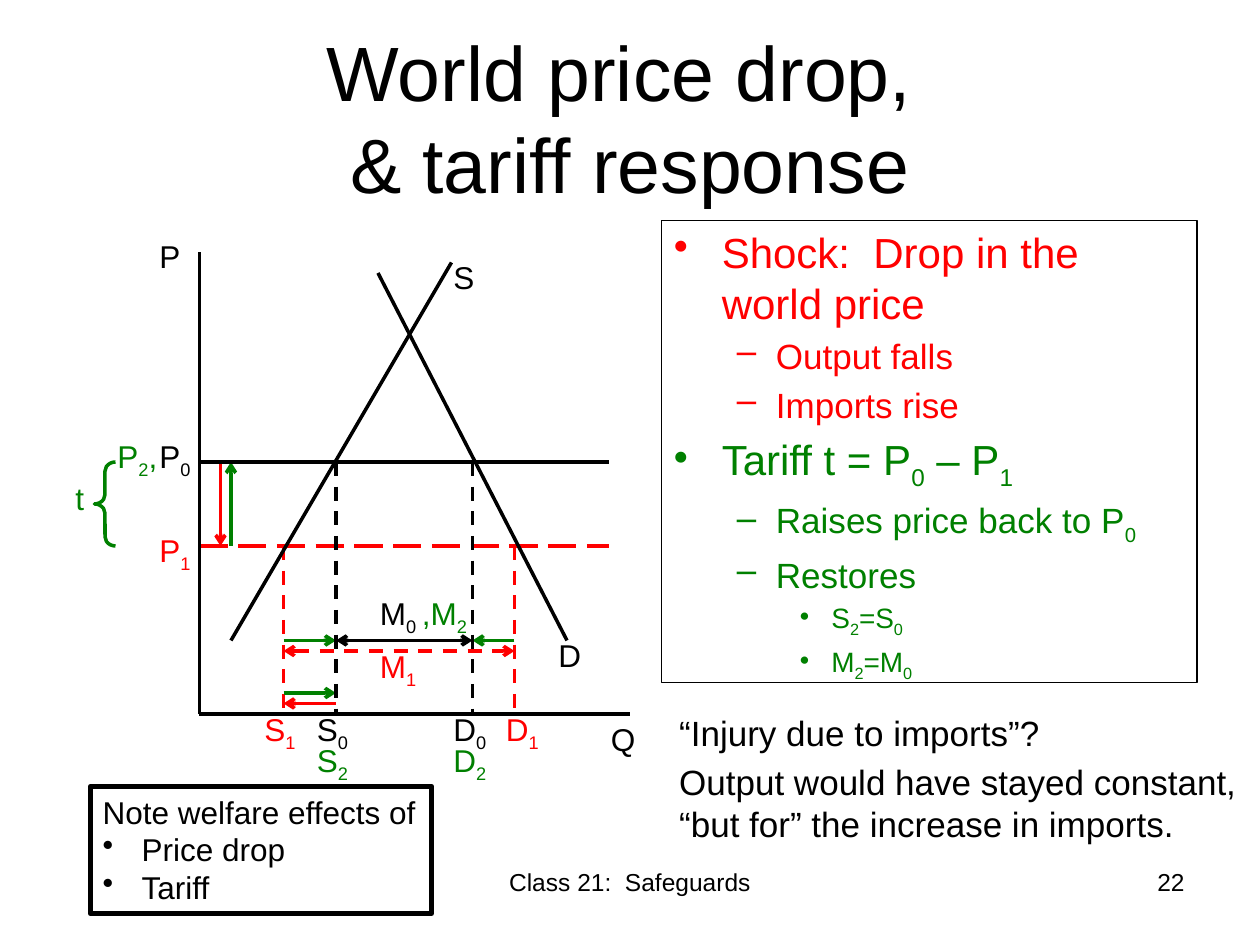
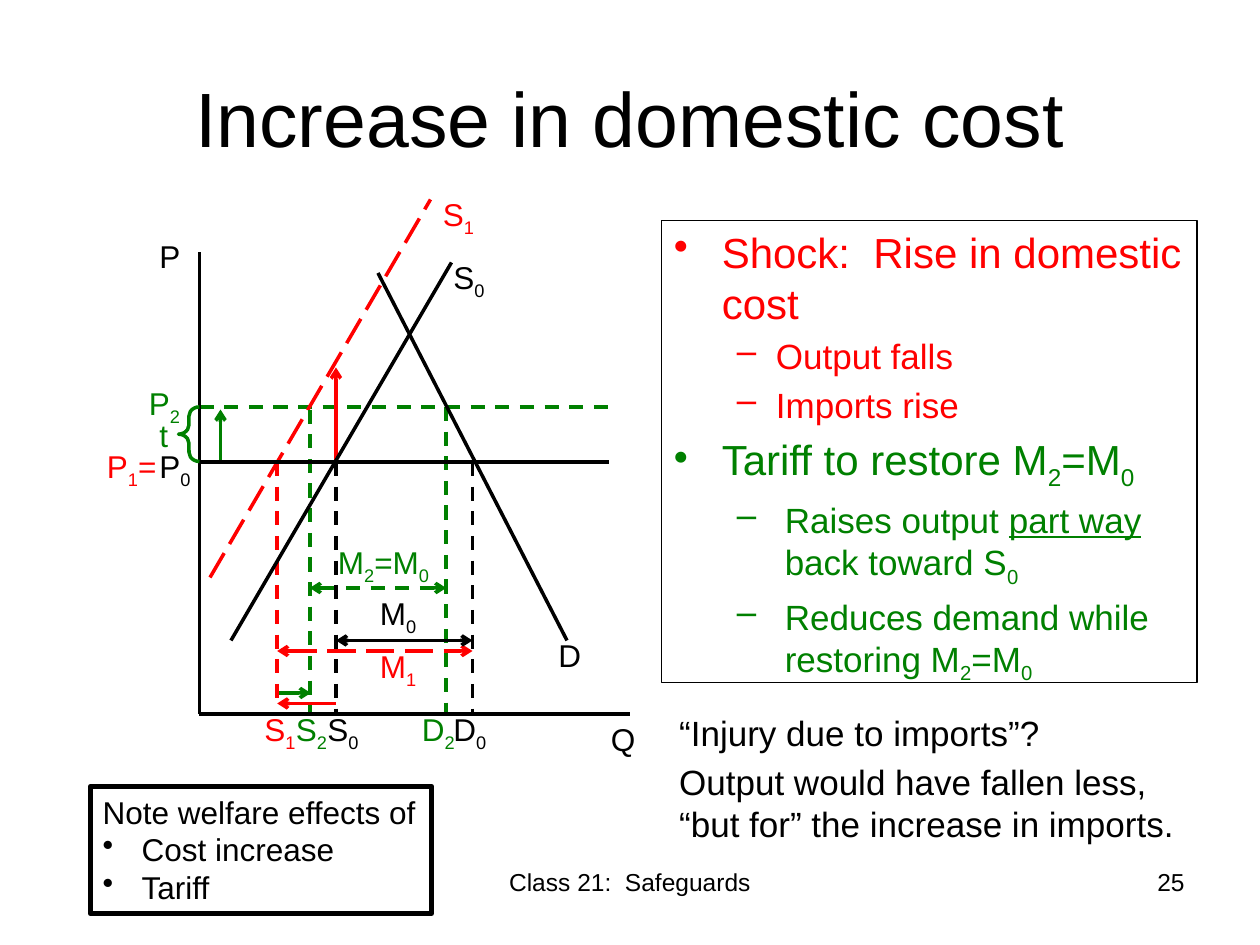
import pptx
import pptx.util
import pptx.dml.color
import pptx.enum.dml
import pptx.enum.shapes
import pptx.enum.text
import pptx.oxml.ns
from lxml import etree

SHAPE = pptx.enum.shapes.MSO_SHAPE
ALIGN = pptx.enum.text.PP_ALIGN
ANCHOR = pptx.enum.text.MSO_ANCHOR
DASHES = pptx.enum.dml.MSO_LINE
rgb = pptx.dml.color.RGBColor.from_string
qn = pptx.oxml.ns.qn

FONT = "Arial"
BLACK, RED, GREEN = "000000", "FF0000", "008000"
SOLID, DASH, LONG = None, DASHES.DASH, DASHES.LONG_DASH
U = pptx.util.Inches(1) // 12  # grid of 120 columns by 90 rows

# style: size, left indent, hanging indent, bullet, space before as share of size
STYLES = {
    "title": (44, 0, 0, "", 0),
    "footer": (14, 0, 0, "", 0),
    "label": (18, 0, 0, "", 0),
    "note item": (18, 0.31, 0.31, "•", 0),
    "remark": (20, 0, 0, "", 0.2),
    "point": (24, 0.38, 0.38, "•", 0.2),
    "dash": (20, 0.81, 0.31, "–", 0.2),
    "wide dash": (20, 0.88, 0.38, "–", 0.2),
    "detail": (16, 1.25, 0.25, "•", 0.2),
}


def write(tf, rows, align=ALIGN.LEFT):
    """Fill tf with (text, style, colour) rows; "|" parts runs, "_" lowers one, "~" underlines one."""
    tf.word_wrap = True
    for i, (text, style, colour) in enumerate(rows):
        size, left, hang, bullet, before = STYLES[style]
        p = tf.add_paragraph() if i else tf.paragraphs[0]
        p.alignment = align
        p.space_before = pptx.util.Pt(before * size)
        if bullet:
            pPr = p._p.get_or_add_pPr()
            pPr.set("marL", str(pptx.util.Inches(left)))
            pPr.set("indent", str(-pptx.util.Inches(hang)))
            etree.SubElement(pPr, qn("a:buChar")).set("char", bullet)
        for part in text.split("|"):
            if part == "\n":
                p.add_line_break()
                continue
            r = p.add_run()
            r.text = part.lstrip("_~")
            r.font.name, r.font.size = FONT, pptx.util.Pt(size)
            r.font.color.rgb = rgb(colour)
            if part[0] == "_":
                r._r.get_or_add_rPr().set("baseline", "-25000")
            if part[0] == "~":
                r.font.underline = True


def outline(s, colour, width=2, dash=SOLID, arrows=""):
    """Draw the line of s; arrows names its ends: "head", "tail" or both."""
    s.line.color.rgb = rgb(colour)
    s.line.width = pptx.util.Pt(width)
    if dash:
        s.line.dash_style = dash
    for end in arrows.split():
        etree.SubElement(s.line._get_or_add_ln(), qn(f"a:{end}End")).set("type", "arrow")


BOTH = "head tail"

# lines: x1, y1, x2, y2, colour, dash, arrows
SHARED_LINES = [
    (19, 68, 60, 68, BLACK, SOLID, ""),
    (19, 68, 19, 24, BLACK, SOLID, ""),
    (54, 61, 36, 26, BLACK, SOLID, ""),
    (22, 61, 43, 25, BLACK, SOLID, ""),
    (19, 44, 58, 44, BLACK, SOLID, ""),
    (32, 44, 32, 68, BLACK, DASH, ""),
    (45, 44, 45, 68, BLACK, DASH, ""),
    (32, 61, 45, 61, BLACK, SOLID, BOTH),
]

# labels: text, x, y, width, colour
SHARED_LABELS = [
    ("P", 14, 22, 9, BLACK),
    ("Q", 57, 68, 9, BLACK),
    ("D", 52, 60, 9, BLACK),
    ("D|_0", 42, 67, 6, BLACK),
    ("M|_0", 35, 56, 6, BLACK),
    ("M|_1", 35, 61, 6, RED),
    ("S|_1", 24, 67, 6, RED),
]

SLIDES = [
    dict(
        title="World price drop, |\n|& tariff response",
        number="22",
        lines=[
            (19, 52, 58, 52, RED, LONG, ""),
            (27, 52, 27, 68, RED, DASH, ""),
            (49, 52, 49, 68, RED, DASH, ""),
            (27, 62, 49, 62, RED, DASH, BOTH),
            (27, 67, 32, 67, RED, SOLID, "head"),
            (21, 52, 21, 44, RED, SOLID, "head"),
            (22, 44, 22, 52, GREEN, SOLID, "head"),
            (27, 66, 32, 66, GREEN, SOLID, "tail"),
            (27, 61, 32, 61, GREEN, SOLID, "tail"),
            (49, 61, 45, 61, GREEN, SOLID, "tail"),
        ],
        labels=[
            ("S", 42, 24, 9, BLACK),
            ("P|_0", 14, 41, 6, BLACK),
            ("P|_1", 14, 50, 6, RED),
            ("S|_0", 29, 67, 6, BLACK),
            ("D|_1", 47, 67, 6, RED),
            ("P|_2|,", 10, 41, 7, GREEN),
            ("S|_2", 29, 70, 6, GREEN),
            ("D|_2", 42, 70, 6, GREEN),
            ("t", 6, 45, 3, GREEN),
            (",M|_2", 39, 56, 7, GREEN),
        ],
        brace=(9, 44, 2, 8),
        panel=[
            ("Shock:  Drop in the world price", "point", RED),
            ("Output falls", "dash", RED),
            ("Imports rise", "dash", RED),
            ("Tariff t = P|_0| – P|_1", "point", GREEN),
            ("Raises price back to P|_0", "dash", GREEN),
            ("Restores", "dash", GREEN),
            ("S|_2|=S|_0", "detail", GREEN),
            ("M|_2|=M|_0", "detail", GREEN),
        ],
        remark="Output would have stayed constant, “but for” the increase in imports.",
        remark_size=(56.5, 18.7),
        shock="Price drop",
    ),
    dict(
        title="Increase in domestic cost",
        number="25",
        lines=[
            (19, 38.75, 58, 38.75, GREEN, DASH, ""),
            (20, 55, 41, 19, RED, LONG, ""),
            (26.4, 44, 26.4, 67, RED, DASH, ""),
            (26.4, 62, 45, 62, RED, LONG, BOTH),
            (26.4, 67, 32, 67, RED, SOLID, "head"),
            (32, 35, 32, 44, RED, SOLID, "head"),
            (29.5, 56, 42.5, 56, GREEN, DASH, BOTH),
            (21, 39, 21, 44, GREEN, SOLID, "head"),
            (29.5, 39, 29.5, 68, GREEN, DASH, ""),
            (42.5, 38.75, 42.5, 68, GREEN, DASH, ""),
            (26.6, 66, 29.6, 66, GREEN, SOLID, "tail"),
        ],
        labels=[
            ("S|_0", 42, 24, 9, BLACK),
            ("P|_0", 14, 42, 6, BLACK),
            ("P|_1|=", 9, 42, 9, RED),
            ("S|_0", 30, 67, 6, BLACK),
            ("S|_1", 41, 18, 9, RED),
            ("t", 14, 39, 3, GREEN),
            ("P|_2", 13, 36, 9, GREEN),
            ("S|_2", 27, 67, 6, GREEN),
            ("D|_2", 39, 67, 6, GREEN),
            ("M|_2|=M|_0", 31, 51.1, 13.3, GREEN),
        ],
        brace=(17, 38.75, 2, 5.2),
        panel=[
            ("Shock:  Rise in domestic cost", "point", RED),
            ("Output falls", "dash", RED),
            ("Imports rise", "dash", RED),
            ("Tariff to restore M|_2|=M|_0", "point", GREEN),
            ("Raises output |~part way| back toward S|_0", "wide dash", GREEN),
            ("Reduces demand while restoring M|_2|=M|_0", "wide dash", GREEN),
        ],
        remark="Output would have fallen less, “but for” the increase in imports.",
        remark_size=(51, 26),
        shock="Cost increase",
    ),
]

prs = pptx.Presentation()
prs.slide_width, prs.slide_height = 120 * U, 90 * U

for page in SLIDES:
    slide = prs.slides.add_slide(prs.slide_layouts[6])

    for *ends, colour, dash, arrows in page["lines"] + SHARED_LINES:
        s = slide.shapes.add_connector(
            pptx.enum.shapes.MSO_CONNECTOR.STRAIGHT, *[round(v * U) for v in ends])
        outline(s, colour, 2, dash, arrows)
        etree.SubElement(s._element.spPr, qn("a:effectLst"))

    remark = [("“Injury due to imports”?", "remark", BLACK), (page["remark"], "remark", BLACK)]
    texts = [
        ((6, 3.6, 108, 15), [(page["title"], "title", BLACK)], ALIGN.CENTER, ANCHOR.MIDDLE),
        ((41, 82, 38, 6.2), [("Class 21:  Safeguards", "footer", BLACK)], ALIGN.CENTER, ANCHOR.TOP),
        ((86, 82, 28, 6.2), [(page["number"], "footer", BLACK)], ALIGN.RIGHT, ANCHOR.TOP),
        ((63.5, 67.2, *page["remark_size"]), remark, ALIGN.LEFT, ANCHOR.TOP),
    ]
    for box, rows, align, anchor in texts:
        s = slide.shapes.add_textbox(*[round(v * U) for v in box])
        s.text_frame.vertical_anchor = anchor
        write(s.text_frame, rows, align)

    for text, x, y, width, colour in SHARED_LABELS + page["labels"]:
        s = slide.shapes.add_textbox(*[round(v * U) for v in (x, y, width, 4.8)])
        s.text_frame.margin_right = 0
        write(s.text_frame, [(text, "label", colour)])

    note = [
        ("Note welfare effects of", "label", BLACK),
        (page["shock"], "note item", BLACK),
        ("Tariff", "note item", BLACK),
    ]
    framed = [
        (SHAPE.LEFT_BRACE, page["brace"], GREEN, 2, []),
        (SHAPE.RECTANGLE, (63, 21, 51, 44), BLACK, 0.75, page["panel"]),
        (SHAPE.RECTANGLE, (8.6, 74.9, 32.5, 12.1), BLACK, 3, note),
    ]
    for kind, box, colour, width, rows in framed:
        s = slide.shapes.add_shape(kind, *[round(v * U) for v in box])
        s.shadow.inherit = False
        s.fill.background()
        outline(s, colour, width)
        if kind == SHAPE.LEFT_BRACE:
            s.adjustments[0] = 0.44
        s.text_frame.vertical_anchor = ANCHOR.TOP
        write(s.text_frame, rows)

prs.save("out.pptx")
